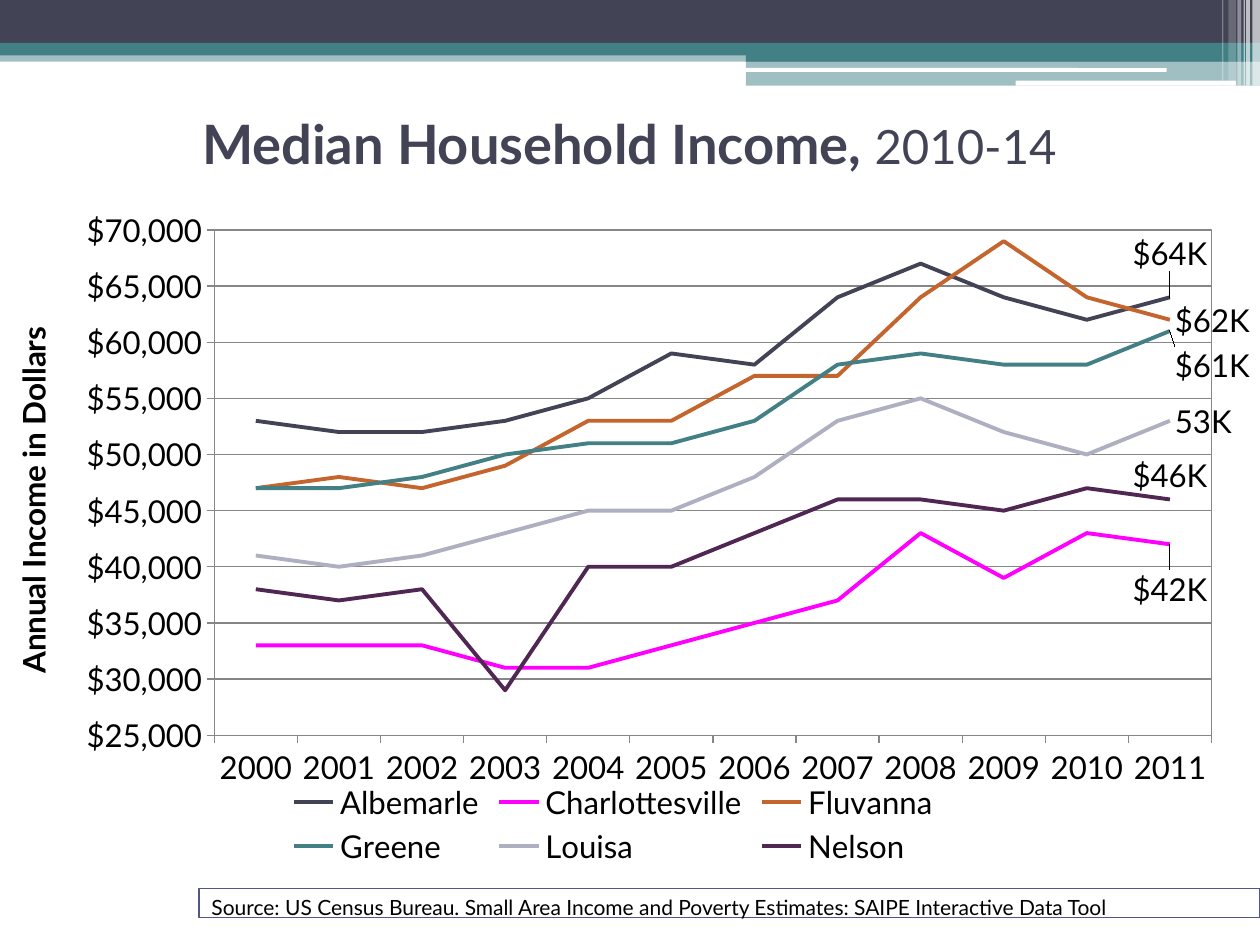
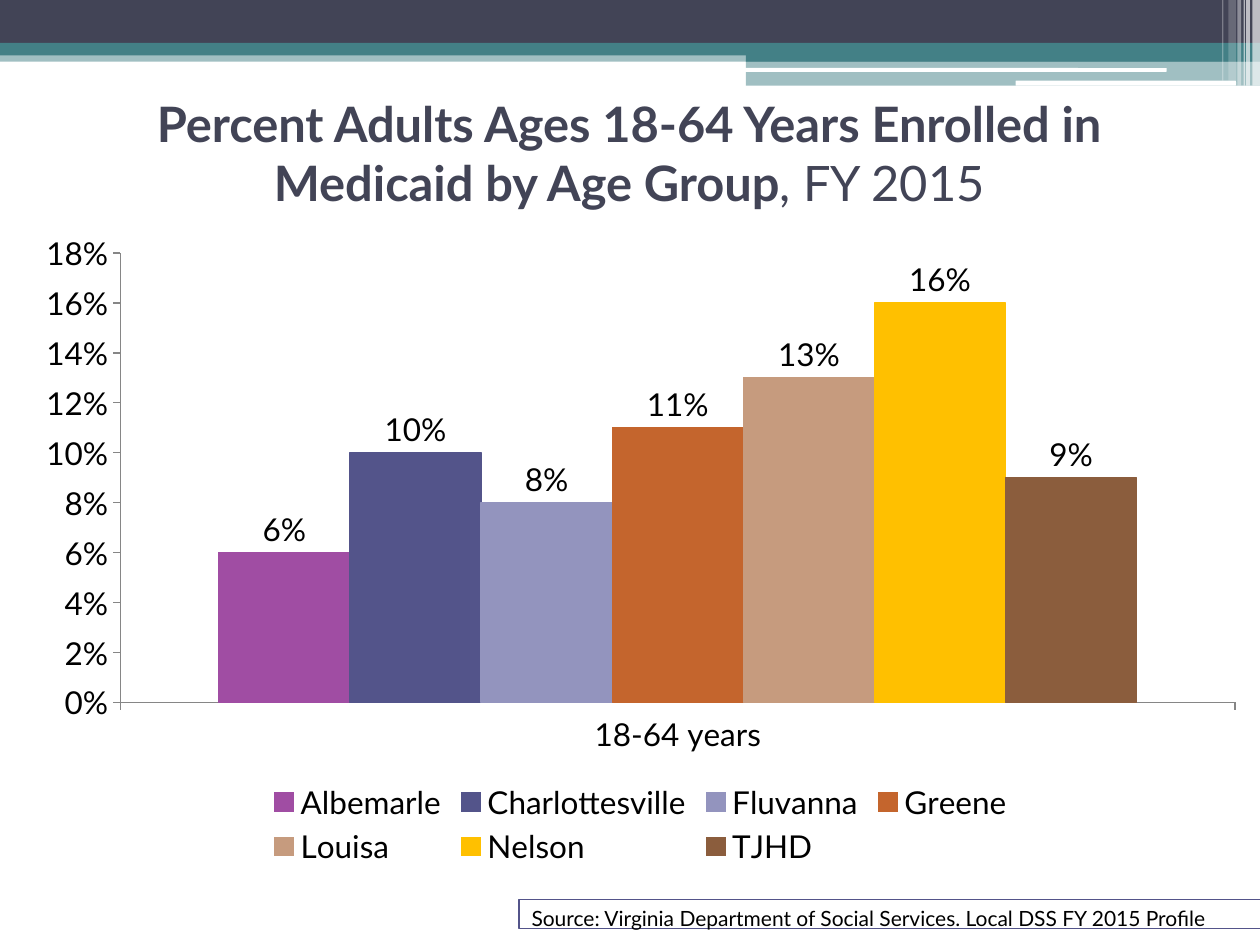
from dataclasses import dataclass

from lxml.etree import SubElement
from pptx import Presentation
from pptx.chart.data import CategoryChartData
from pptx.dml.color import RGBColor
from pptx.enum.chart import (XL_CHART_TYPE as ChartType, XL_LABEL_POSITION as LabelPos,
                             XL_LEGEND_POSITION as LegendPos, XL_TICK_MARK as Tick)
from pptx.enum.shapes import MSO_SHAPE as Shape
from pptx.enum.text import MSO_ANCHOR as Anchor, PP_ALIGN as Align
from pptx.oxml import parse_xml
from pptx.oxml.ns import nsdecls, qn
from pptx.util import Inches, Pt


@dataclass(frozen=True)
class Theme:
    font: str = "Lato"
    navy: str = "424456"
    teal: str = "438086"
    indigo: str = "53548A"
    orange: str = "C4652D"
    white: str = "FFFFFF"
    black: str = "000000"
    axis: str = "868686"
    chart_size: float = 18
    source_size: float = 12
    title_size: float = 27.9
    big_title_size: float = 31
    subtitle_size: float = 27
    line_width: float = 2.25


THEME = Theme()

# left, top, width, height, colour, opacity in percent
BANDS = [
    (0, 0.4, 10, 0.09, THEME.teal, 50),
    (0, 0, 10, 0.34, THEME.navy, 100),
    (0, 0.34, 10, 0.1, THEME.teal, 100),
    (5.92, 0.39, 4.08, 0.1, THEME.teal, 100),
    (5.92, 0.48, 4.08, 0.2, THEME.teal, 50),
]
WHITE_RULES = [(5.91, 0.54, 3.35, 0.03), (8.06, 0.64, 1.75, 0.04)]
# left, width, height, opacity in percent
STRIPES = [(9.94, 0.06, 0.68, 65), (9.89, 0.03, 0.68, 65), (9.87, 0.01, 0.68, 60),
           (9.82, 0.03, 0.68, 40), (9.75, 0.06, 0.64, 20), (9.7, 0.01, 0.64, 30)]

YEARS = [str(year) for year in range(2000, 2012)]
# name, colour, incomes in thousands, end label, its position, its vertical shift
INCOMES = [
    ("Albemarle", THEME.navy, (53, 52, 52, 53, 55, 59, 58, 64, 67, 64, 62, 64),
     "$64K", LabelPos.ABOVE, -0.03),
    ("Charlottesville", "FF00FF", (33, 33, 33, 31, 31, 33, 35, 37, 43, 39, 43, 42),
     "$42K", LabelPos.BELOW, 0.03),
    ("Fluvanna", THEME.orange, (47, 48, 47, 49, 53, 53, 57, 57, 64, 69, 64, 62),
     "$62K", LabelPos.RIGHT, 0),
    ("Greene", THEME.teal, (47, 47, 48, 50, 51, 51, 53, 58, 59, 58, 58, 61),
     "$61K", LabelPos.RIGHT, 0.05),
    ("Louisa", "AEB0C1", (41, 40, 41, 43, 45, 45, 48, 53, 55, 52, 50, 53),
     "53K", LabelPos.RIGHT, 0),
    ("Nelson", "502652", (38, 37, 38, 29, 40, 40, 43, 46, 46, 45, 47, 46),
     "$46K", LabelPos.ABOVE, 0),
]
ENROLLED = [
    ("Albemarle", "A04DA3", 0.06), ("Charlottesville", THEME.indigo, 0.1),
    ("Fluvanna", "9394BE", 0.08), ("Greene", THEME.orange, 0.11),
    ("Louisa", "C69B7E", 0.13), ("Nelson", "FFC000", 0.16), ("TJHD", "8B5D3D", 0.09),
]


def rgb(color):
    return RGBColor.from_string(color)


def set_font(font, size, color=THEME.black, bold=False):
    font.name, font.size, font.bold = THEME.font, Pt(size), bold
    font.color.rgb = rgb(color)


def set_line(line, color, width=0.75):
    line.color.rgb = rgb(color)
    line.width = Pt(width)


def add_text(tf, text, size, color=THEME.black, bold=False, align=Align.LEFT):
    """Append one formatted run to the first paragraph."""
    p = tf.paragraphs[0]
    p.alignment = align
    r = p.add_run()
    r.text = text
    set_font(r.font, size, color, bold)


def add_box(s, box, fill, opacity=100, shape=Shape.RECTANGLE):
    sp = s.shapes.add_shape(shape, *map(Inches, box))
    sp.shadow.inherit = False
    sp.fill.solid()
    sp.fill.fore_color.rgb = rgb(fill)
    sp.line.fill.background()
    if opacity < 100:
        clr = sp._element.spPr.find(".//" + qn("a:srgbClr"))
        SubElement(clr, qn("a:alpha"), val=str(opacity * 1000))
    return sp


def add_header(s):
    for *box, color, opacity in BANDS:
        add_box(s, box, color, opacity)
    for box in WHITE_RULES:
        add_box(s, box, THEME.white, shape=Shape.ROUNDED_RECTANGLE)
    for left, width, height, opacity in STRIPES:
        add_box(s, (left, 0, width, height), THEME.white, opacity)


def add_title(s, height, *runs):
    """Add a centred title from (text, size, bold) runs."""
    tf = s.shapes.add_textbox(*map(Inches, (0.83, 0.67, 8.33, height))).text_frame
    tf.word_wrap = True
    tf.vertical_anchor = Anchor.MIDDLE
    for text, size, bold in runs:
        add_text(tf, text, size, THEME.navy, bold, Align.CENTER)


def add_source(s, box, text):
    sp = add_box(s, box, THEME.white)
    set_line(sp.line, THEME.indigo)
    sp.text_frame.vertical_anchor = Anchor.TOP
    add_text(sp.text_frame, text, THEME.source_size)


def layout_xml(**values):
    parts = "".join(f'<c:{key} val="{value}"/>' for key, value in values.items())
    return parse_xml(f'<c:layout {nsdecls("c")}><c:manualLayout>{parts}'
                     '</c:manualLayout></c:layout>')


def place_plot(chart, x, y, w, h):
    area = chart._chartSpace.find(".//" + qn("c:plotArea"))
    for old in area.findall(qn("c:layout")):
        area.remove(old)
    area.insert(0, layout_xml(layoutTarget="inner", xMode="edge", yMode="edge",
                              x=x, y=y, w=w, h=h))
    return area


def add_chart(s, kind, box, categories, series, number_format, scale):
    """Add a chart of (name, values) series; scale is minimum, maximum and step."""
    data = CategoryChartData()
    data.categories = categories
    for name, values in series:
        data.add_series(name, values)
    chart = s.shapes.add_chart(kind, *map(Inches, box), data).chart
    chart.has_title = False
    set_font(chart.font, THEME.chart_size)
    chart.has_legend = True
    chart.legend.position = LegendPos.BOTTOM
    chart.legend.include_in_layout = False
    chart.plots[0].vary_by_categories = False
    for axis in (chart.category_axis, chart.value_axis):
        axis.major_tick_mark, axis.minor_tick_mark = Tick.OUTSIDE, Tick.NONE
        set_line(axis.format.line, THEME.axis)
    axis = chart.value_axis
    axis.minimum_scale, axis.maximum_scale, axis.major_unit = scale
    axis.has_major_gridlines = False
    axis.tick_labels.number_format = number_format
    axis.tick_labels.number_format_is_linked = False
    return chart


def label_last_point(ser, index, text, position, shift):
    label = ser.points[index].data_label
    add_text(label.text_frame, text, THEME.chart_size, align=Align.CENTER)
    label.position = position
    if shift:
        idx = ser._element.find(".//" + qn("c:dLbl")).find(qn("c:idx"))
        idx.addnext(layout_xml(x=0, y=shift))


def add_income_chart(s):
    series = [(name, [value * 1000 for value in values]) for name, _, values, *_ in INCOMES]
    chart = add_chart(s, ChartType.LINE, (-0.08, 1.5, 10, 5.42), YEARS, series,
                      '"$"#,##0', (25000, 70000, 5000))
    area = place_plot(chart, 0.18, 0.06, 0.8, 0.74)
    area.append(parse_xml(f'<c:spPr {nsdecls("c", "a")}><a:noFill/><a:ln w="9525"><a:solidFill>'
                          f'<a:srgbClr val="{THEME.axis}"/></a:solidFill></a:ln></c:spPr>'))
    axis = chart.value_axis
    axis.has_major_gridlines = True
    set_line(axis.major_gridlines.format.line, THEME.axis)
    add_text(axis.axis_title.text_frame, "Annual Income in Dollars", THEME.chart_size,
             bold=True, align=Align.CENTER)
    for ser, (_, color, _, *label) in zip(chart.plots[0].series, INCOMES):
        ser.smooth = False
        set_line(ser.format.line, color, THEME.line_width)
        label_last_point(ser, len(YEARS) - 1, *label)


def add_enrollment_chart(s):
    series = [(name, [value]) for name, _, value in ENROLLED]
    chart = add_chart(s, ChartType.COLUMN_CLUSTERED, (0.17, 1.75, 9.83, 5.17),
                      ["18-64 years"], series, "0%", (0, 0.18, 0.02))
    place_plot(chart, 0.08, 0.05, 0.9, 0.69)
    plot = chart.plots[0]
    plot.gap_width, plot.overlap = 150, 0
    for ser, (_, color, _) in zip(plot.series, ENROLLED):
        ser.format.fill.solid()
        ser.format.fill.fore_color.rgb = rgb(color)
        set_line(ser.format.line, color)
        labels = ser.data_labels
        labels.show_value = True
        labels.position = LabelPos.OUTSIDE_END
        labels.number_format, labels.number_format_is_linked = "0%", False
        set_font(labels.font, THEME.chart_size)


def add_slide(prs):
    s = prs.slides.add_slide(prs.slide_layouts[6])
    add_header(s)
    return s


def main():
    prs = Presentation()
    prs.slide_width, prs.slide_height = Inches(10), Inches(7.5)

    s = add_slide(prs)
    add_title(s, 0.92, ("Median Household Income, ", THEME.big_title_size, True),
              ("2010-14", THEME.subtitle_size, False))
    add_source(s, (1.58, 7.05, 8.42, 0.23), "Source: US Census Bureau. Small Area Income and "
               "Poverty Estimates: SAIPE Interactive Data Tool")
    add_income_chart(s)

    s = add_slide(prs)
    add_title(s, 1.08, ("Percent Adults Ages 18-64 Years Enrolled in Medicaid by Age Group",
                        THEME.title_size, True), (", FY 2015", THEME.title_size, False))
    add_source(s, (4.12, 7.14, 5.92, 0.23), "Source: Virginia Department of Social Services. "
               "Local DSS FY 2015 Profile")
    add_enrollment_chart(s)

    prs.save("out.pptx")


if __name__ == "__main__":
    main()
